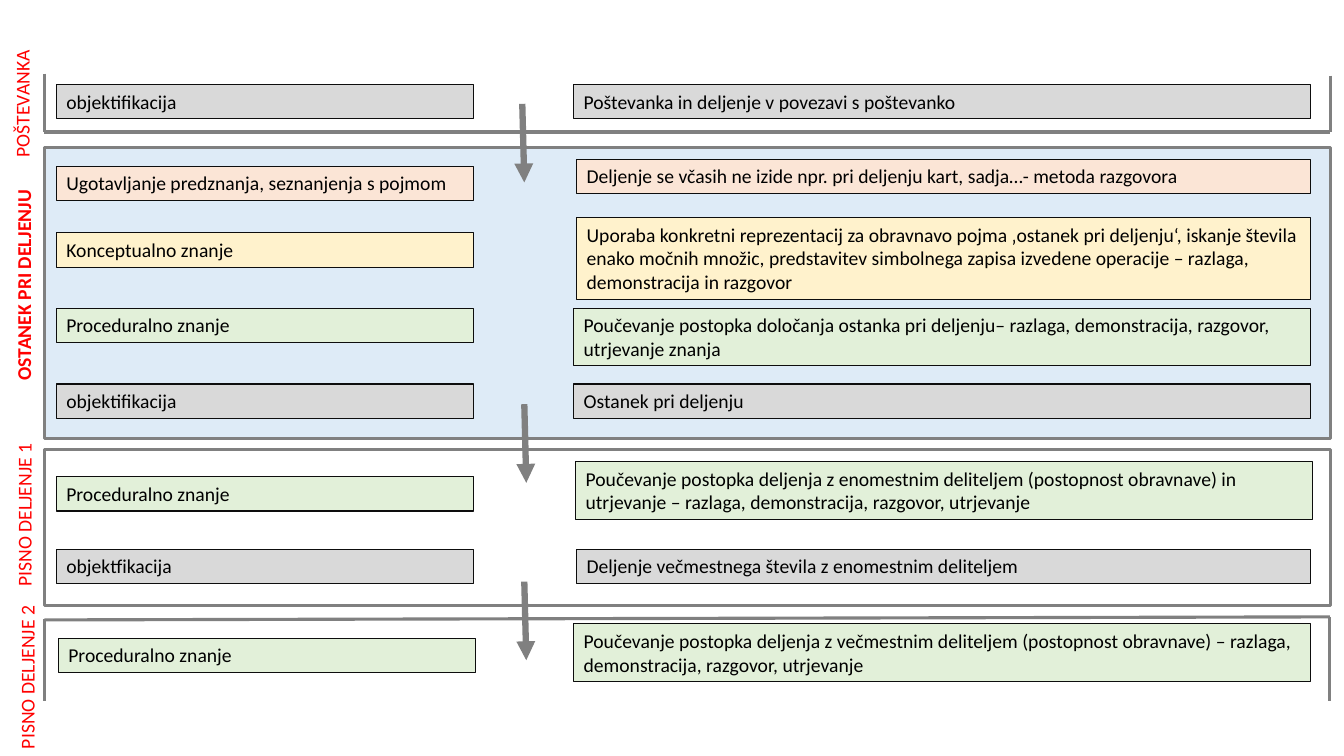
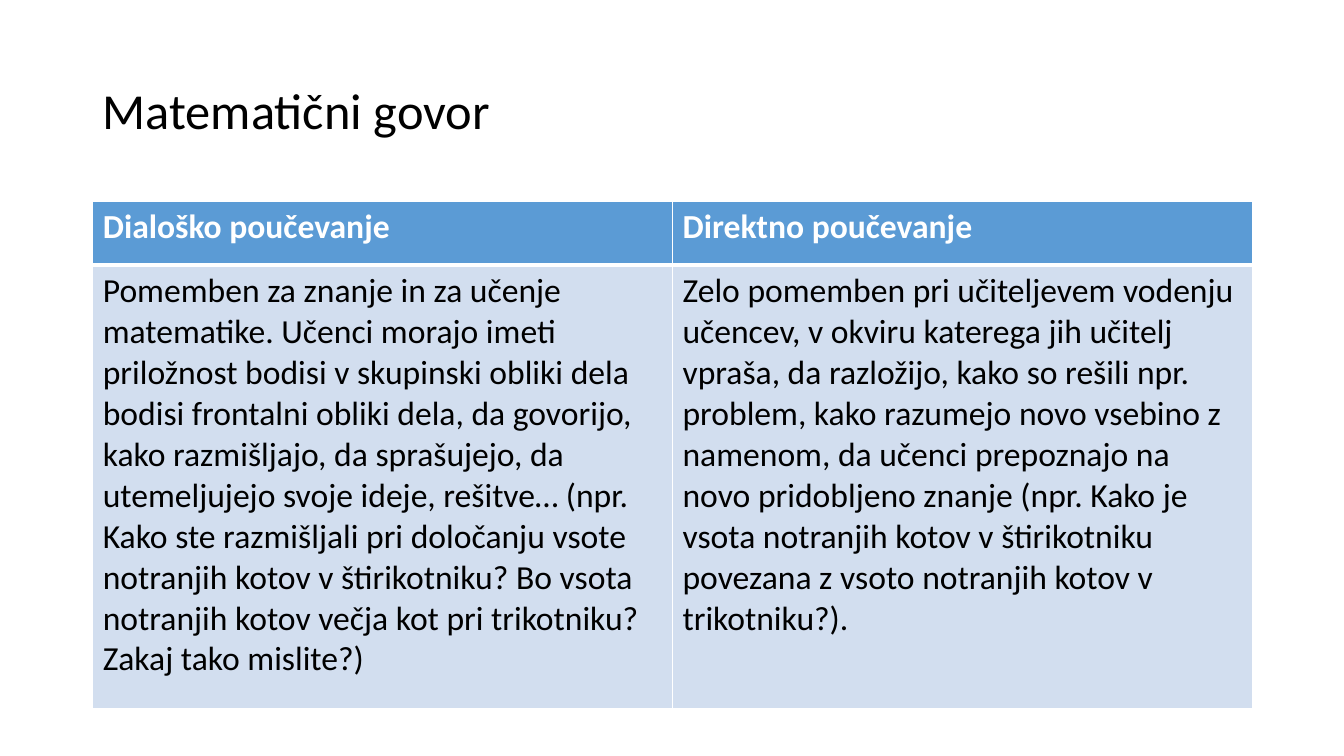
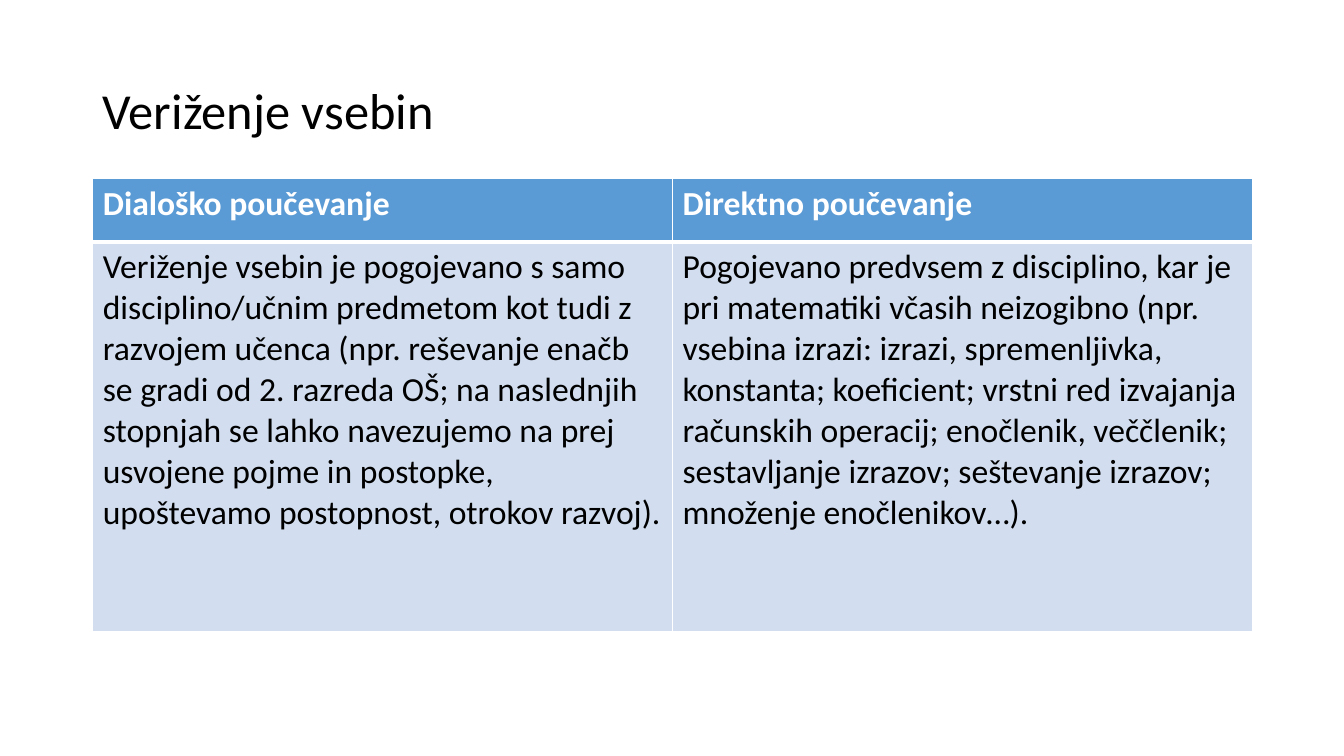
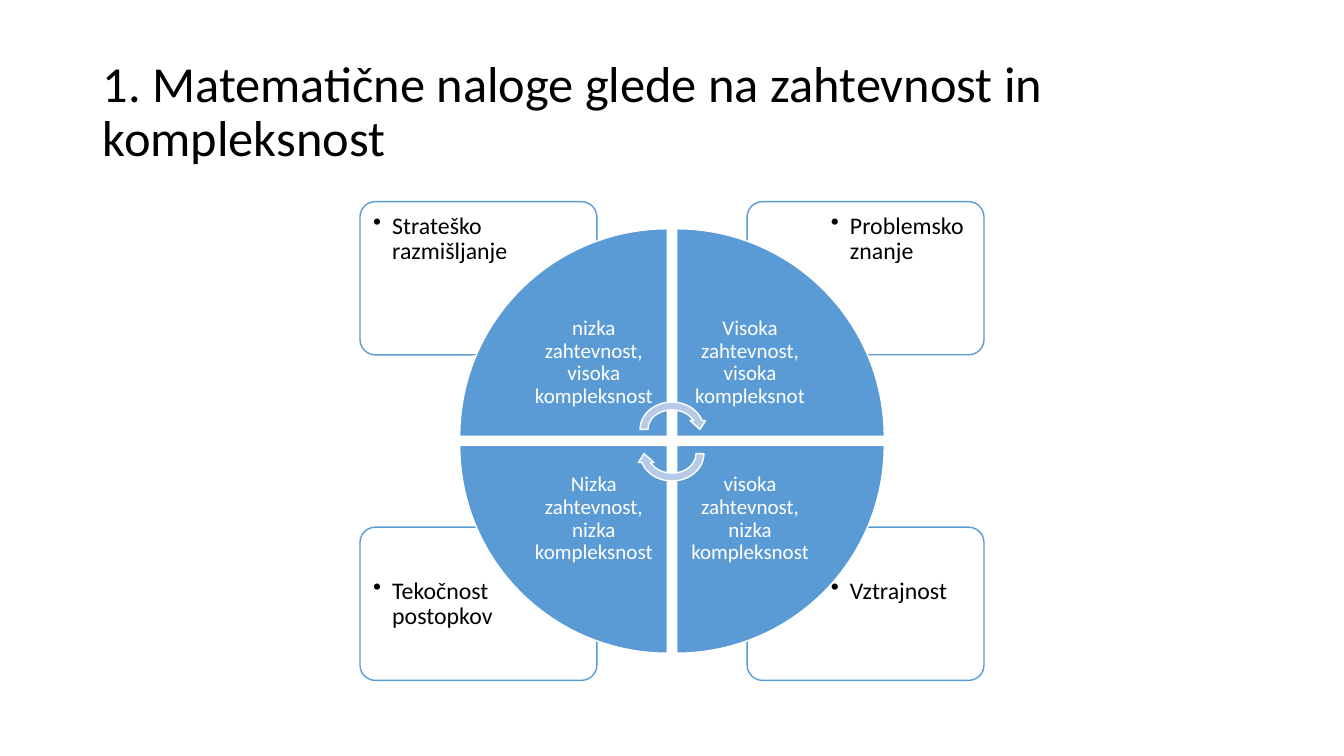
from pptx import Presentation
from pptx.dml.color import RGBColor
from pptx.enum.shapes import MSO_CONNECTOR as Link, MSO_SHAPE as Shape
from pptx.enum.text import MSO_ANCHOR as Anchor, MSO_AUTO_SIZE as Fit, PP_ALIGN as Align
from pptx.oxml.ns import qn
from pptx.oxml.xmlchemy import OxmlElement as Node
from pptx.util import Pt

BLACK = RGBColor(0x00, 0x00, 0x00)
WHITE = RGBColor(0xFF, 0xFF, 0xFF)
INK = RGBColor(0x0D, 0x0D, 0x0D)
RED = RGBColor(0xFF, 0x00, 0x00)
STEEL = RGBColor(0x80, 0x80, 0x80)
GREY = RGBColor(0xD9, 0xD9, 0xD9)
PEACH = RGBColor(0xFB, 0xE5, 0xD6)
CREAM = RGBColor(0xFF, 0xF2, 0xCC)
GREEN = RGBColor(0xE2, 0xF0, 0xD9)
SKY = RGBColor(0xDE, 0xEB, 0xF7)
BLUE = RGBColor(0x5B, 0x9B, 0xD5)
PALE = RGBColor(0xD2, 0xDE, 0xEF)
MIST = RGBColor(0xB5, 0xCB, 0xE7)

FONT = "Calibri"
SCALE = 9144  # EMU in one px, 100 px to the inch


def emu(*sizes):
    return [size * SCALE for size in sizes]


class Deck:
    def __init__(self):
        self.show = Presentation()
        self.show.slide_width, self.show.slide_height = emu(1333, 750)
        self.slide = None

    def start(self, title=None):
        """Add a slide, with a title if one is given."""
        layout = self.show.slide_layouts[5 if title else 6]
        self.slide = self.show.slides.add_slide(layout)
        if title:
            head = self.slide.shapes.title
            head.left, head.top, head.width, head.height = emu(92, 40, 1150, 145)
            self.fill_frame(head.text_frame, title, 36, anchor=Anchor.MIDDLE, space=0.9)

    def fill_frame(self, frame, text, size, color=BLACK, bold=False, align=Align.LEFT,
                   anchor=Anchor.TOP, space=1.0, inset=None, bullet=False):
        frame.word_wrap = True
        frame.auto_size = Fit.NONE
        frame.vertical_anchor = anchor
        if inset:
            (gap,) = emu(inset)
            frame.margin_left = frame.margin_right = gap
            frame.margin_top = frame.margin_bottom = gap
        self.fill_par(frame.paragraphs[0], text, size, color, bold, align, space, bullet)

    def fill_par(self, par, text, size, color, bold=False, align=Align.LEFT,
                 space=1.0, bullet=False):
        par.alignment = align
        par.line_spacing = space
        if bullet:
            props = par._p.get_or_add_pPr()
            (hang,) = emu(19)
            props.set("marL", str(hang))
            props.set("indent", str(-hang))
            mark = Node("a:buChar")
            mark.set("char", "•")
            props.append(mark)
        run = par.add_run()
        run.text = text
        font = run.font
        font.name, font.size, font.bold = FONT, Pt(size), bold
        font.color.rgb = color

    def shape(self, kind, area, fill, line, width, turn=0):
        item = self.slide.shapes.add_shape(kind, *emu(*area))
        item.shadow.inherit = False
        item.rotation = turn
        if fill is None:
            item.fill.background()
        else:
            item.fill.solid()
            item.fill.fore_color.rgb = fill
        item.line.color.rgb = line
        item.line.width = Pt(width)
        return item

    def frame(self, area, fill=None):
        self.shape(Shape.RECTANGLE, area, fill, STEEL, 2.25)

    def box(self, area, fill, text):
        item = self.shape(Shape.RECTANGLE, area, fill, INK, 0.75)
        self.fill_frame(item.text_frame, text, 14)

    def text(self, area, text, size, turn=0, **style):
        item = self.slide.shapes.add_textbox(*emu(*area))
        item.rotation = turn
        self.fill_frame(item.text_frame, text, size, **style)

    def card(self, area):
        item = self.shape(Shape.ROUNDED_RECTANGLE, area, WHITE, BLUE, 1)
        item.adjustments[0] = 0.1
        alpha = Node("a:alpha")
        alpha.set("val", "90000")
        item._element.spPr.find(qn("a:solidFill"))[0].append(alpha)

    def line(self, ends, width=2.25, arrow=False):
        item = self.slide.shapes.add_connector(Link.STRAIGHT, *emu(*ends))
        item.line.color.rgb = STEEL
        item.line.width = Pt(width)
        props = item._element.spPr
        if arrow:
            tip = Node("a:tailEnd")
            tip.set("type", "triangle")
            props.find(qn("a:ln")).append(tip)
        props.append(Node("a:effectLst"))

    def edge(self, cell, side, width):
        """Draw one white cell border; call before filling the cell."""
        line = Node("a:ln" + side)
        line.set("w", str(Pt(width)))
        paint, color = Node("a:solidFill"), Node("a:srgbClr")
        color.set("val", str(WHITE))
        paint.append(color)
        line.append(paint)
        cell._tc.get_or_add_tcPr().append(line)

    def table(self, top, depth, rows):
        heights = 63, depth
        area = emu(92, top, 1150, sum(heights))
        grid = self.slide.shapes.add_table(2, 2, *area).table
        looks = (BLUE, WHITE, True), (PALE, BLACK, False)
        for r, (texts, (fill, color, bold)) in enumerate(zip(rows, looks)):
            (grid.rows[r].height,) = emu(heights[r])
            for c, text in enumerate(texts):
                cell = grid.cell(r, c)
                for side in "LRTB":
                    thick = (r, side) in ((0, "B"), (1, "T"))
                    self.edge(cell, side, 3 if thick else 1)
                cell.fill.solid()
                cell.fill.fore_color.rgb = fill
                self.fill_par(cell.text_frame.paragraphs[0], text, 24, color, bold)


def stages(deck):
    deck.start()
    deck.frame((44, 146, 1276, 289), SKY)
    deck.frame((44, 446, 1276, 155))

    know, view = "Proceduralno znanje", "objektifikacija"
    for x, y, fill, text in (
        (56, 84, GREY, view),
        (56, 165, PEACH, "Ugotavljanje predznanja, seznanjenja s pojmom"),
        (56, 231, CREAM, "Konceptualno znanje"),
        (56, 306, GREEN, know),
        (56, 381, GREY, view),
        (56, 473, GREEN, know),
        (56, 545, GREY, "objektfikacija"),
        (58, 633, GREEN, know),
    ):
        deck.box((x, y, 414, 34), fill, text)

    for x, y, width, height, fill, text in (
        (569, 84, 731, 34, GREY, "Poštevanka in deljenje v povezavi s poštevanko"),
        (572, 158, 728, 34, PEACH,
         "Deljenje se včasih ne izide npr. pri deljenju kart, sadja…- metoda razgovora"),
        (572, 216, 728, 81, CREAM,
         "Uporaba konkretni reprezentacij za obravnavo pojma ‚ostanek pri deljenju‘, "
         "iskanje števila enako močnih množic, predstavitev simbolnega zapisa izvedene "
         "operacije – razlaga, demonstracija in razgovor"),
        (569, 306, 731, 57, GREEN,
         "Poučevanje postopka določanja ostanka pri deljenju– razlaga, demonstracija, "
         "razgovor, utrjevanje znanja"),
        (569, 381, 731, 34, GREY, "Ostanek pri deljenju"),
        (571, 458, 731, 57, GREEN,
         "Poučevanje postopka deljenja z enomestnim deliteljem (postopnost obravnave) in "
         "utrjevanje – razlaga, demonstracija, razgovor, utrjevanje"),
        (572, 545, 728, 34, GREY, "Deljenje večmestnega števila z enomestnim deliteljem"),
        (569, 619, 731, 57, GREEN,
         "Poučevanje postopka deljenja z večmestnim deliteljem (postopnost obravnave) – "
         "razlaga, demonstracija, razgovor, utrjevanje"),
    ):
        deck.box((x, y, width, height), fill, text)

    for ends in (
        (44, 73, 44, 131), (1320, 75, 1320, 131), (44, 131, 1319, 131),
        (44, 614, 44, 695), (1319, 612, 1319, 695), (1319, 612, 44, 615),
    ):
        deck.line(ends)
    for x, y in (518, 103), (520, 401), (520, 577):
        deck.line((x, y, x + 2, y + 78), 4.5, arrow=True)

    for x, y, width, text, bold in (
        (-70, 86, 184, "POŠTEVANKA", False),
        (-111, 266, 269, "OSTANEK PRI DELJENJU", True),
        (-57, 494, 162, "PISNO DELJENJE 1", False),
        (-54, 655, 162, "PISNO DELJENJE 2", False),
    ):
        deck.text((x, y, width, 34), text, 14, turn=270, color=RED, bold=bold,
                  align=Align.CENTER)


def compare(deck, title, top, depth, *texts):
    """Set the two ways of teaching side by side."""
    deck.start(title)
    heads = "Dialoško poučevanje", "Direktno poučevanje"
    deck.table(top, depth, (heads, texts))


def cycle(deck):
    deck.start("1. Matematične naloge glede na zahtevnost in kompleksnost")
    for x, y, inner, top, text in (
        (741, 523, 815, 565, "Vztrajnost"),
        (357, 523, 361, 565, "Tekočnost postopkov"),
        (741, 200, 815, 203, "Problemsko znanje"),
        (357, 200, 361, 203, "Strateško razmišljanje"),
    ):
        deck.card((x, y, 235, 152))
        deck.text((inner, top, 158, 108), text, 17, space=0.9, inset=9, bullet=True)

    side, inner = 206, 146
    for step, (x, y, text) in enumerate((
        (456, 227, "nizka zahtevnost, visoka kompleksnost"),
        (671, 227, "Visoka zahtevnost, visoka kompleksnot"),
        (671, 442, "visoka zahtevnost, nizka kompleksnost"),
        (456, 442, "Nizka zahtevnost, nizka kompleksnost"),
    )):
        deck.shape(Shape.PIE_WEDGE, (x, y, side, side), BLUE, WHITE, 1, turn=90 * step)
        left = x + (side - inner if x == 456 else 0)
        top = y + (side - inner if y == 227 else 0)
        deck.text((left, top, inner, inner), text, 15, color=WHITE, align=Align.CENTER,
                  anchor=Anchor.MIDDLE, space=0.9, inset=12)

    for y, turn in (395, 0), (419, 180):
        deck.shape(Shape.CIRCULAR_ARROW, (631, y, 71, 62), MIST, WHITE, 1, turn=turn)


def main():
    deck = Deck()
    stages(deck)
    compare(
        deck, "Matematični govor", 200, 440,
        "Pomemben za znanje in za učenje matematike. Učenci morajo imeti priložnost bodisi "
        "v skupinski obliki dela bodisi frontalni obliki dela, da govorijo, kako "
        "razmišljajo, da sprašujejo, da utemeljujejo svoje ideje, rešitve… (npr. Kako ste "
        "razmišljali pri določanju vsote notranjih kotov v štirikotniku? Bo vsota notranjih "
        "kotov večja kot pri trikotniku? Zakaj tako mislite?)",
        "Zelo pomemben pri učiteljevem vodenju učencev, v okviru katerega jih učitelj "
        "vpraša, da razložijo, kako so rešili npr. problem, kako razumejo novo vsebino z "
        "namenom, da učenci prepoznajo na novo pridobljeno znanje (npr. Kako je vsota "
        "notranjih kotov v štirikotniku povezana z vsoto notranjih kotov v trikotniku?).",
    )
    compare(
        deck, "Veriženje vsebin", 177, 387,
        "Veriženje vsebin je pogojevano s samo disciplino/učnim predmetom kot tudi z "
        "razvojem učenca (npr. reševanje enačb se gradi od 2. razreda OŠ; na naslednjih "
        "stopnjah se lahko navezujemo na prej usvojene pojme in postopke, upoštevamo "
        "postopnost, otrokov razvoj).",
        "Pogojevano predvsem z disciplino, kar je pri matematiki včasih neizogibno (npr. "
        "vsebina izrazi: izrazi, spremenljivka, konstanta; koeficient; vrstni red izvajanja "
        "računskih operacij; enočlenik, veččlenik; sestavljanje izrazov; seštevanje "
        "izrazov; množenje enočlenikov…).",
    )
    cycle(deck)
    deck.show.save("out.pptx")


if __name__ == "__main__":
    main()
